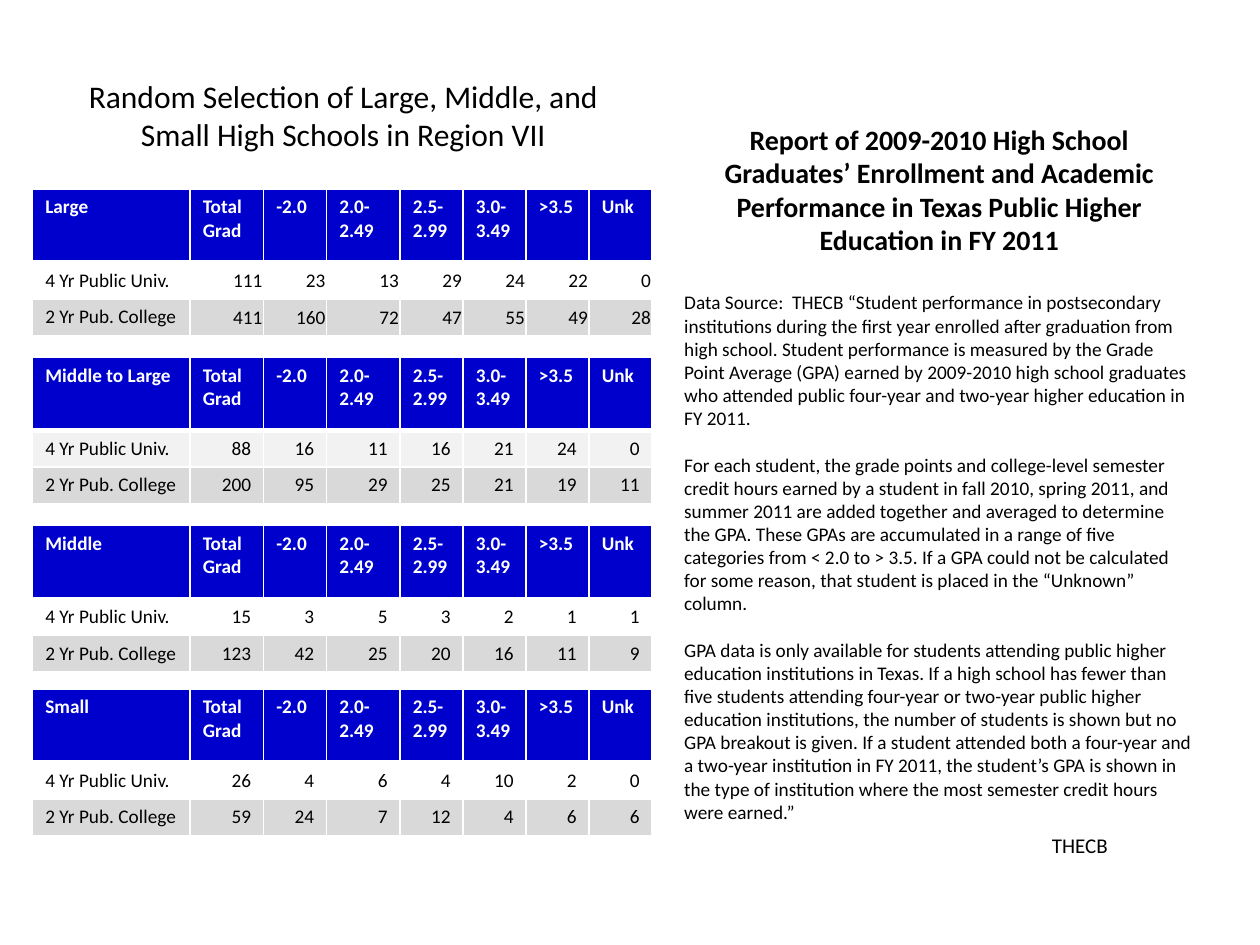
import pptx
import pptx.dml.color
import pptx.enum.text
import pptx.oxml
import pptx.oxml.ns
import pptx.util

WIDE, HIGH = 10, 7.5
UNIT = 1 / 12
COLS = (15, 7, 6, 7, 6, 6, 6, 6)
ROWS = (7, 3.4, 3.4)
TINT = {"head": "0000CC", "white": "FFFFFF", "pale": "F2F2F2",
        "gray": "D9D9D9", "ink": "000000"}
ALIGN = pptx.enum.text.PP_ALIGN
ANCHOR = pptx.enum.text.MSO_ANCHOR
SPACE = pptx.oxml.ns.nsdecls("a")

HEADS = ("Total Grad", "-2.0", "2.0-2.49", "2.5-2.99", "3.0-3.49", ">3.5", "Unk")
FOUR, TWO = "4 Yr Public Univ.", "2 Yr Pub. College"
GROUPS = (
    ("Large", 20, "white", True,
     (111, 23, 13, 29, 24, 22, 0), (411, 160, 72, 47, 55, 49, 28)),
    ("Middle to Large", 37.8, "pale", False,
     (88, 16, 11, 16, 21, 24, 0), (200, 95, 29, 25, 21, 19, 11)),
    ("Middle", 55.6, "white", False,
     (15, 3, 5, 3, 2, 1, 1), (123, 42, 25, 20, 16, 11, 9)),
    ("Small", 72.93, "white", False,
     (26, 4, 6, 4, 10, 2, 0), (59, 24, 7, 12, 4, 6, 6)),
)
TITLE = "Random Selection of Large, Middle, and Small High Schools in Region VII"
REPORT = ("Report of 2009-2010 High School Graduates’ Enrollment and Academic "
          "Performance in Texas Public Higher Education in FY 2011")
NOTES = (
    "Data Source:  THECB “Student performance in postsecondary institutions during "
    "the first year enrolled after graduation from high school. Student performance "
    "is measured by the Grade Point Average (GPA) earned by 2009-2010 high school "
    "graduates who attended public four-year and two-year higher education in FY 2011.",
    "For each student, the grade points and college-level semester credit hours earned "
    "by a student in fall 2010, spring 2011, and summer 2011 are added together and "
    "averaged to determine the GPA. These GPAs are accumulated in a range of five "
    "categories from < 2.0 to > 3.5. If a GPA could not be calculated for some reason, "
    "that student is placed in the “Unknown” column.",
    "GPA data is only available for students attending public higher education "
    "institutions in Texas. If a high school has fewer than five students attending "
    "four-year or two-year public higher education institutions, the number of students "
    "is shown but no GPA breakout is given. If a student attended both a four-year and "
    "a two-year institution in FY 2011, the student’s GPA is shown in the type of "
    "institution where the most semester credit hours were earned.”",
)


def spot(left, top, width, height):
    """Turn percent shares of the slide into lengths."""
    return [pptx.util.Inches(share * side / 100) for share, side in
            zip((left, top, width, height), (WIDE, HIGH, WIDE, HIGH))]


def place(shape, *shares):
    """Move a placeholder to its share of the slide."""
    shape.left, shape.top, shape.width, shape.height = spot(*shares)
    shape.text_frame.auto_size = pptx.enum.text.MSO_AUTO_SIZE.NONE


def write(para, text, size=11, bold=False, tint="ink", align=ALIGN.LEFT, after=0):
    """Fill a paragraph with formatted text."""
    props = para._p.get_or_add_pPr()
    props.set("marL", "0")
    props.set("indent", "0")
    props.append(pptx.oxml.parse_xml(f"<a:buNone {SPACE}/>"))
    para.alignment = align
    para.space_before = pptx.util.Pt(0)
    para.space_after = pptx.util.Pt(after)
    run = para.add_run()
    run.text = text
    run.font.name = "Calibri"
    run.font.size = pptx.util.Pt(size)
    run.font.bold = bold
    run.font.color.rgb = pptx.dml.color.RGBColor.from_string(TINT[tint])


def edge(cell, base):
    """Draw white lines around a cell, with its base line in points."""
    for side, width in (("L", 1), ("R", 1), ("T", 1), ("B", base)):
        cell._tc.get_or_add_tcPr().append(pptx.oxml.parse_xml(
            f'<a:ln{side} {SPACE} w="{pptx.util.Pt(width)}"><a:solidFill>'
            f'<a:srgbClr val="{TINT["white"]}"/></a:solidFill></a:ln{side}>'))


def paint(cell, text, fill, base=1, tight=False, **form):
    """Format one table cell and write its text."""
    edge(cell, base)
    cell.fill.solid()
    cell.fill.fore_color.rgb = pptx.dml.color.RGBColor.from_string(TINT[fill])
    if tight:
        cell.margin_left = cell.margin_right = cell.margin_top = pptx.util.Inches(0.01)
        cell.margin_bottom = 0
        cell.vertical_anchor = ANCHOR.MIDDLE
    write(cell.text_frame.paragraphs[0], text, **form)


def grid(slide, name, top, fill, tight, four, two):
    """Add the table of one school size."""
    area = spot(2.6, top, sum(COLS) * UNIT * 100 / WIDE, sum(ROWS) * UNIT * 100 / HIGH)
    table = slide.shapes.add_table(len(ROWS), len(COLS), *area).table
    table.horz_banding = False
    for col, size in zip(table.columns, COLS):
        col.width = pptx.util.Inches(size * UNIT)
    for row, size in zip(table.rows, ROWS):
        row.height = pptx.util.Inches(size * UNIT)
    for col, text in enumerate((name, *HEADS)):
        paint(table.cell(0, col), text, "head", base=3, bold=True, tint="white")
    lines = ((FOUR, four, fill), (TWO, two, "gray"))
    for row, (label, counts, shade) in enumerate(lines, 1):
        paint(table.cell(row, 0), label, shade)
        for col, count in enumerate(counts, 1):
            paint(table.cell(row, col), str(count), shade, tight=tight, align=ALIGN.RIGHT)


def title(slide):
    """Set the slide title."""
    shape = slide.shapes.title
    place(shape, 3.9, 7.5, 46.7, 9.4)
    write(shape.text_frame.paragraphs[0], TITLE, size=18, align=ALIGN.CENTER)


def report(slide):
    """Set the report heading and its notes."""
    shape = slide.placeholders[1]
    place(shape, 53.3, 12.27, 42.5, 76.13)
    frame = shape.text_frame
    write(frame.paragraphs[0], REPORT, size=16, bold=True, align=ALIGN.CENTER, after=19.5)
    for note in NOTES:
        write(frame.add_paragraph(), note, after=0 if note == NOTES[-1] else 13.4)


def credit(slide):
    """Add the source label."""
    frame = slide.shapes.add_textbox(*spot(82.5, 87.47, 13.3, 4)).text_frame
    frame.word_wrap = True
    write(frame.paragraphs[0], "THECB", size=12)


def main():
    """Build and save the slide."""
    deck = pptx.Presentation()
    deck.slide_width, deck.slide_height = pptx.util.Inches(WIDE), pptx.util.Inches(HIGH)
    slide = deck.slides.add_slide(deck.slide_layouts[1])
    for group in GROUPS:
        grid(slide, *group)
    report(slide)
    title(slide)
    credit(slide)
    deck.save("out.pptx")


if __name__ == "__main__":
    main()
